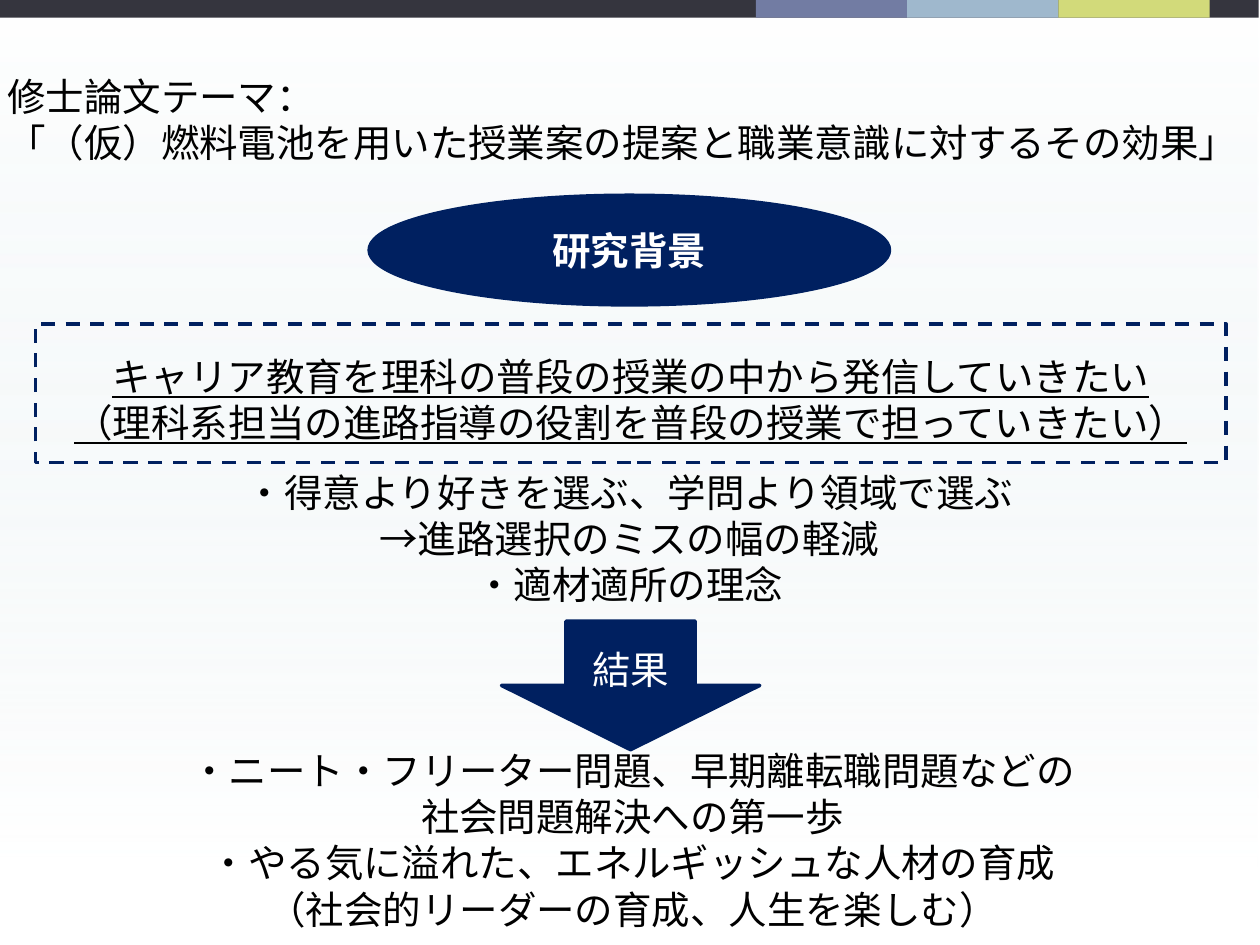
from lxml import etree
from pptx import Presentation
from pptx.dml.color import RGBColor
from pptx.enum.dml import MSO_LINE
from pptx.enum.shapes import MSO_SHAPE
from pptx.enum.text import MSO_ANCHOR, PP_ALIGN
from pptx.oxml.ns import qn
from pptx.util import Inches, Pt

RECT, OVAL, DOWN = MSO_SHAPE.RECTANGLE, MSO_SHAPE.OVAL, MSO_SHAPE.DOWN_ARROW
LEFT, CENTER = PP_ALIGN.LEFT, PP_ALIGN.CENTER
C = {"navy": "002060", "white": "FFFFFF", "black": "000000", "mist": "DDE9EC",
     "dark": "35353E", "violet": "727CA3", "blue": "9FB8CD", "lime": "D2DA7A"}


def add_shape(kind, box, fill=None, line=None):
    sp = s.shapes.add_shape(kind, *[Inches(v) for v in box])
    sp.shadow.inherit = False
    if fill:
        sp.fill.solid()
        sp.fill.fore_color.rgb = RGBColor.from_string(C[fill])
    else:
        sp.fill.background()
    if line:
        sp.line.color.rgb = RGBColor.from_string(C[line])
        sp.line.width = Pt(2)
    else:
        sp.line.fill.background()
    return sp


def write(tf, lines, color="black", align=CENTER, bold=None, underline=None):
    for i, line in enumerate(lines):
        p = tf.add_paragraph() if i else tf.paragraphs[0]
        p.text = line
        p.alignment = align
        for r in p.runs:
            r.font.name = "Calibri"
            r.font.size = Pt(22)
            r.font.bold = bold
            r.font.underline = underline
            r.font.color.rgb = RGBColor.from_string(C[color])


prs = Presentation()
prs.slide_width, prs.slide_height = Inches(10), Inches(7.5)
s = prs.slides.add_slide(prs.slide_layouts[6])

# Background wash, from clear at the bottom to white at the top
wash = add_shape(RECT, (-0.01, 0, 10, 6.88))
wash.fill.gradient()
wash.fill.gradient_angle = 90
stops = wash.fill.gradient_stops
for stop, pos, color in zip(stops, (0.01, 1), ("mist", "white")):
    stop.position = pos
    stop.color.rgb = RGBColor.from_string(C[color])
grad = wash._element.spPr.find(qn("a:gradFill"))
for clr, alpha in zip(grad.iter(qn("a:srgbClr")), (0, 92000)):
    etree.SubElement(clr, qn("a:alpha")).set("val", str(alpha))

# Top band
add_shape(RECT, (-0.01, -0.02, 10, 0.16), "dark")
for i, color in enumerate(("violet", "blue", "lime")):
    add_shape(RECT, (6 + 1.2 * i, -0.02, 1.2, 0.16), color)

# Heading oval, result arrow and dashed frame
oval = add_shape(OVAL, (2.93, 1.55, 4.13, 0.87), "navy", "navy")
arrow = add_shape(DOWN, (3.98, 4.93, 2.05, 1.02), "navy", "navy")
for sp, label, bold in ((oval, "研究背景", True), (arrow, "結果", None)):
    sp.text_frame.vertical_anchor = MSO_ANCHOR.MIDDLE
    write(sp.text_frame, [label], "white", bold=bold)
frame = add_shape(RECT, (0.28, 2.57, 9.45, 1.1), line="navy")
frame.line.dash_style = MSO_LINE.DASH

# Text blocks: box, alignment, underline, lines
blocks = [
    ((-0.04, 0.53, 10.08, 0.84), LEFT, None,
     ["修士論文テーマ：",
      "「（仮）燃料電池を用いた授業案の提案と職業意識に対するその効果」"]),
    ((0.43, 2.75, 9.15, 0.84), CENTER, True,
     ["キャリア教育を理科の普段の授業の中から発信していきたい",
      "（理科系担当の進路指導の役割を普段の授業で担っていきたい）"]),
    ((1.81, 3.67, 6.37, 1.21), CENTER, None,
     ["・得意より好きを選ぶ、学問より領域で選ぶ\v→進路選択のミスの幅の軽減",
      "・適材適所の理念"]),
    ((1.37, 5.88, 7.3, 1.58), CENTER, None,
     ["・ニート・フリーター問題、早期離転職問題などの",
      "社会問題解決への第一歩",
      "・やる気に溢れた、エネルギッシュな人材の育成",
      "（社会的リーダーの育成、人生を楽しむ）"]),
]
for box, align, underline, lines in blocks:
    tf = s.shapes.add_textbox(*[Inches(v) for v in box]).text_frame
    tf.word_wrap = False
    write(tf, lines, align=align, underline=underline)

prs.save("out.pptx")
